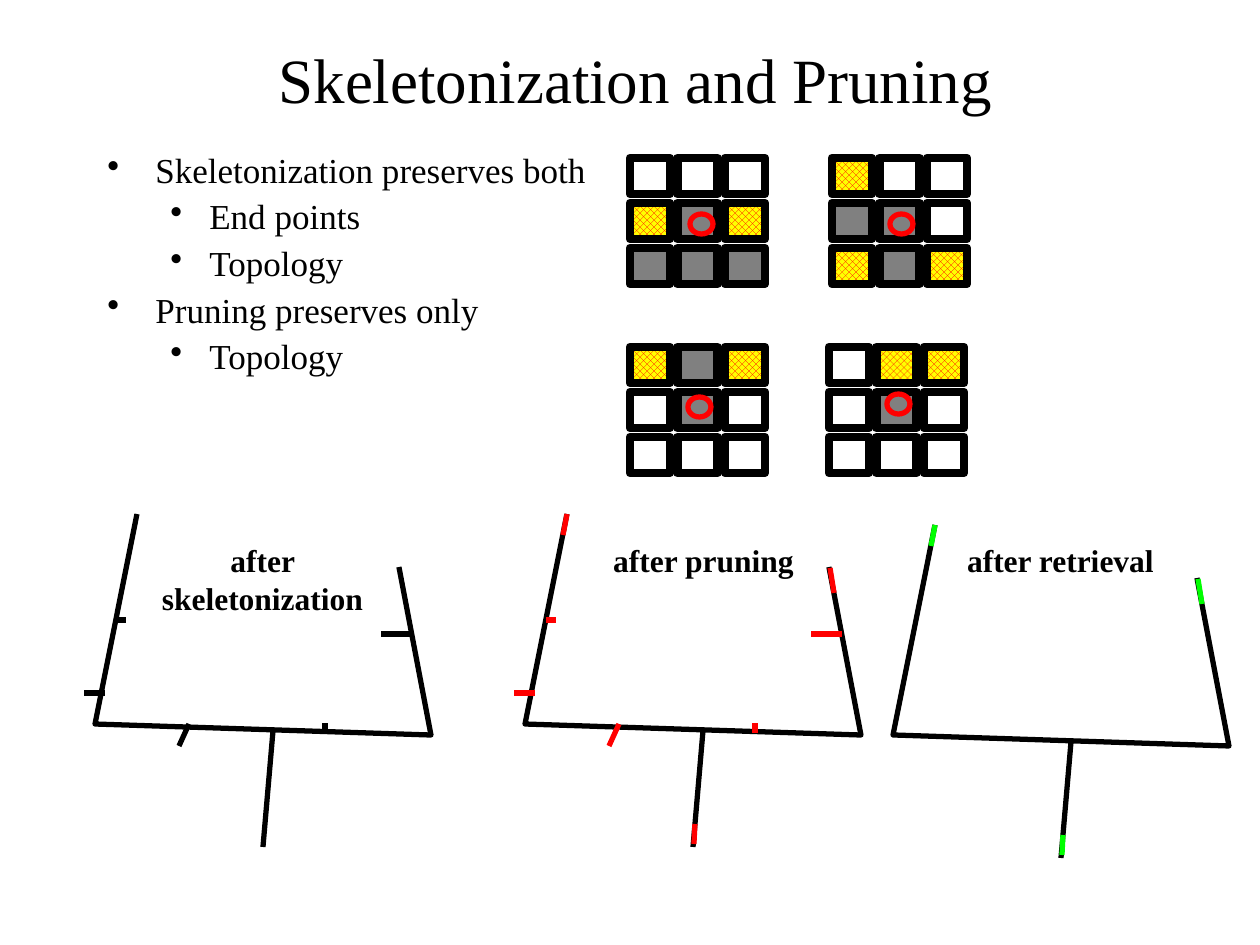
from lxml import etree
from pptx import Presentation
from pptx.dml.color import RGBColor
from pptx.enum.dml import MSO_PATTERN as Pattern
from pptx.enum.shapes import MSO_CONNECTOR as Connector, MSO_SHAPE as Shape
from pptx.enum.text import MSO_ANCHOR as Anchor, PP_ALIGN as Align
from pptx.oxml.ns import qn
from pptx.util import Emu, Pt

PX = 914400 / 126
FONT = "Times New Roman"
COLORS = {
    "black": "000000",
    "gray": "808080",
    "yellow": "FFFF00",
    "red": "FF0000",
    "green": "00FF00",
}

TITLE = ("Skeletonization and Pruning", (81, 24, 1109, 108))
BODY_BOX = (95, 147, 1061, 726)
BULLETS = [
    (0, "Skeletonization preserves both"),
    (1, "End points"),
    (1, "Topology"),
    (0, "Pruning preserves only"),
    (1, "Topology"),
]
INDENTS = [(48, -48), (102, -39)]

OUTLINE = [(137, 514), (95, 724), (431, 735), (399, 567)]
STEM = [(273, 731), (263, 847)]
SPURS = [
    [(412, 634), (381, 634)],
    [(116, 620), (126, 620)],
    [(105, 693), (84, 693)],
    [(325, 733), (325, 723)],
    [(189, 724), (179, 746)],
]
TIPS = [
    [(137, 514), (133, 535)],
    [(400, 568), (404, 593)],
    [(265, 824), (264, 844)],
]
SKELETONS = [
    {"offset": (0, 0), "spurs": "black", "tips": None},
    {"offset": (430, 0), "spurs": "red", "tips": "red"},
    {"offset": (798, 11), "spurs": None, "tips": "green"},
]
LABELS = [
    ("after skeletonization", (147, 535, 231, 88)),
    ("after pruning", (588, 535, 231, 50)),
    ("after retrieval", (945, 535, 231, 50)),
]

CELL_SIZE = (40, 36)
COLUMN_PITCH, ROW_PITCH = 47.5, 45
CIRCLE_SIZE = (23, 20)
MASKS = [
    {"origin": (630, 158), "circle": (690, 214), "rows": ["...", "Y#Y", "###"]},
    {"origin": (832, 158), "circle": (890, 214), "rows": ["Y..", "##.", "Y#Y"]},
    {"origin": (630, 347), "circle": (688, 397), "rows": ["Y#Y", ".#.", "..."]},
    {"origin": (829, 347), "circle": (887, 394), "rows": [".YY", ".#.", "..."]},
]


def px(value):
    return Emu(round(value * PX))


def rgb(name):
    return RGBColor.from_string(COLORS[name])


def set_line(shape, color, width):
    shape.line.color.rgb = rgb(color)
    shape.line.width = Pt(width)


def format_runs(paragraph, size, bold=False):
    for run in paragraph.runs:
        run.font.name = FONT
        run.font.size = Pt(size)
        run.font.bold = bold
        run.font.color.rgb = rgb("black")


def add_text(slide, box, lines):
    frame = slide.shapes.add_textbox(*map(px, box)).text_frame
    frame.word_wrap = True
    frame.text = "\n".join(lines)
    return frame


def add_centered(slide, text, box, size, bold=False, anchor=Anchor.TOP):
    frame = add_text(slide, box, [text])
    frame.vertical_anchor = anchor
    frame.paragraphs[0].alignment = Align.CENTER
    format_runs(frame.paragraphs[0], size, bold)


def add_bullets(slide):
    frame = add_text(slide, BODY_BOX, [text for _, text in BULLETS])
    for paragraph, (level, _) in zip(frame.paragraphs, BULLETS):
        paragraph.level = level
        paragraph.line_spacing = 0.9
        paragraph.space_before = Pt(5)
        format_runs(paragraph, 20)
        properties = paragraph._p.get_or_add_pPr()
        margin, indent = INDENTS[level]
        properties.set("marL", str(px(margin)))
        properties.set("indent", str(px(indent)))
        etree.SubElement(properties, qn("a:buChar")).set("char", "•")


def shift(points, offset):
    return [(x + offset[0], y + offset[1]) for x, y in points]


def add_path(slide, points, color):
    builder = slide.shapes.build_freeform(*points[0], scale=PX)
    builder.add_line_segments(points[1:], close=False)
    shape = builder.convert_to_shape()
    shape.shadow.inherit = False
    shape.fill.background()
    set_line(shape, color, 3)


def add_segment(slide, points, color):
    (x1, y1), (x2, y2) = points
    line = slide.shapes.add_connector(Connector.STRAIGHT, px(x1), px(y1), px(x2), px(y2))
    set_line(line, color, 3)
    etree.SubElement(line._element.spPr, qn("a:effectLst"))


def add_skeleton(slide, skeleton):
    offset = skeleton["offset"]
    add_path(slide, shift(OUTLINE, offset), "black")
    add_segment(slide, shift(STEM, offset), "black")
    if skeleton["spurs"]:
        for spur in SPURS:
            add_segment(slide, shift(spur, offset), skeleton["spurs"])
    if skeleton["tips"]:
        for tip in TIPS:
            add_path(slide, shift(tip, offset), skeleton["tips"])


def add_outlined(group, kind, position, size, color, width):
    shape = group.shapes.add_shape(kind, *map(px, (*position, *size)))
    shape.shadow.inherit = False
    shape.fill.background()
    set_line(shape, color, width)
    return shape


def add_mask(slide, mask):
    group = slide.shapes.add_group_shape()
    left, top = mask["origin"]
    for row, marks in enumerate(mask["rows"]):
        for column in (1, 0, 2):
            position = (left + column * COLUMN_PITCH, top + row * ROW_PITCH)
            cell = add_outlined(group, Shape.RECTANGLE, position, CELL_SIZE, "black", 5)
            if marks[column] == "#":
                cell.fill.solid()
                cell.fill.fore_color.rgb = rgb("gray")
            elif marks[column] == "Y":
                cell.fill.patterned()
                cell.fill.pattern = Pattern.OUTLINED_DIAMOND
                cell.fill.fore_color.rgb = rgb("red")
                cell.fill.back_color.rgb = rgb("yellow")
    add_outlined(group, Shape.OVAL, mask["circle"], CIRCLE_SIZE, "red", 3)


def main():
    presentation = Presentation()
    presentation.slide_width, presentation.slide_height = px(1260), px(945)
    slide = presentation.slides.add_slide(presentation.slide_layouts[6])
    add_centered(slide, *TITLE, 36, anchor=Anchor.MIDDLE)
    add_bullets(slide)
    for skeleton in SKELETONS:
        add_skeleton(slide, skeleton)
    for mask in MASKS:
        add_mask(slide, mask)
    for text, box in LABELS:
        add_centered(slide, text, box, 18, bold=True)
    presentation.save("out.pptx")


if __name__ == "__main__":
    main()
